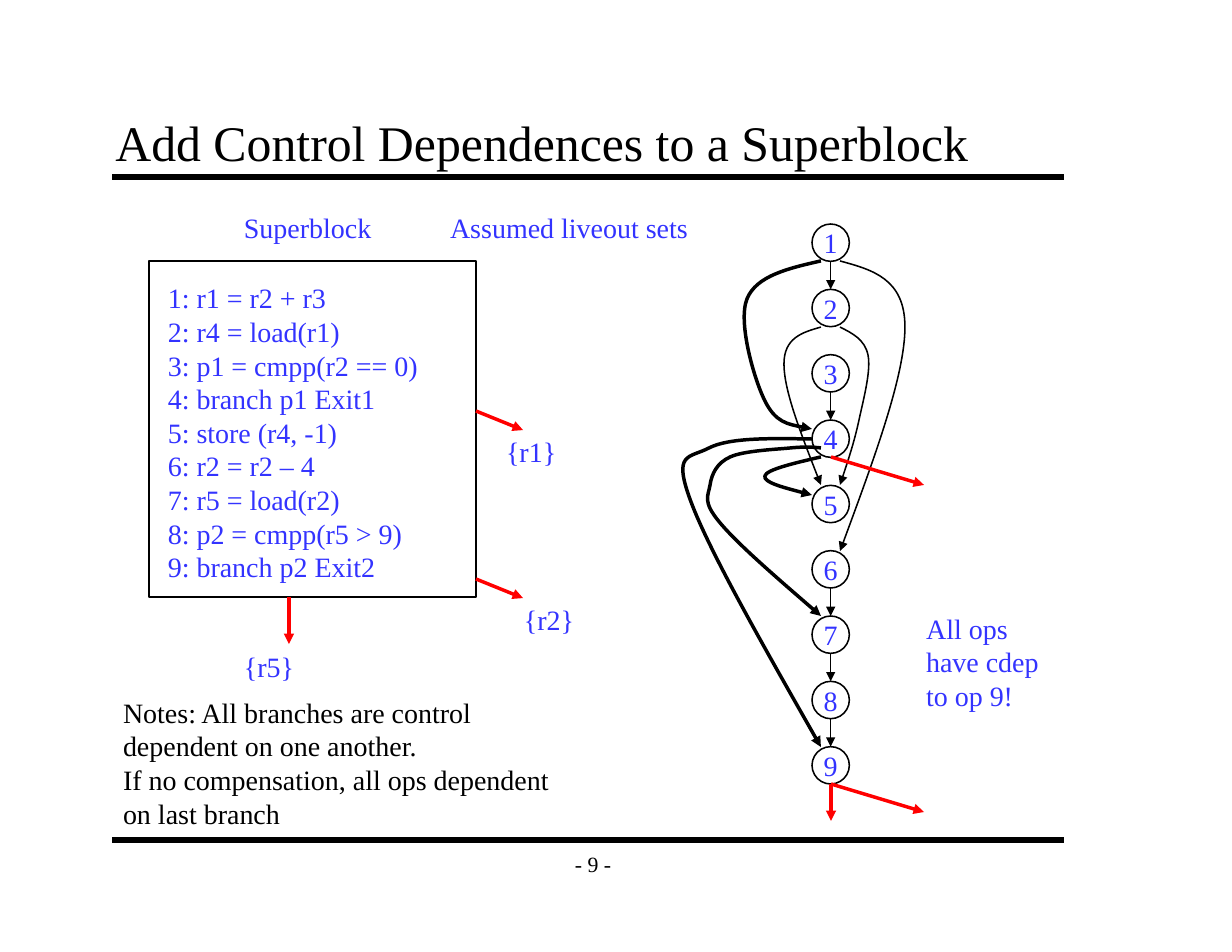
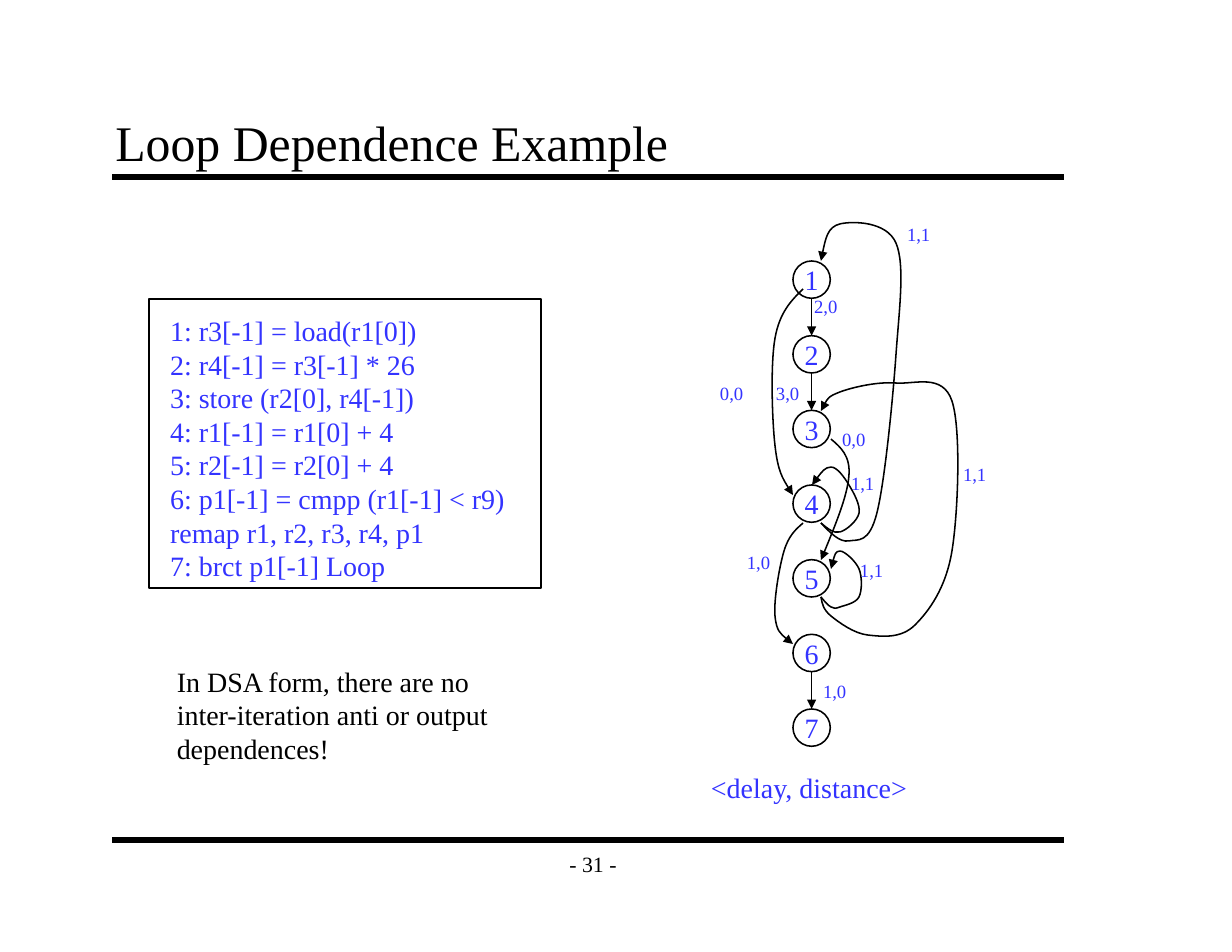
from lxml import etree
from pptx import Presentation
from pptx import util as u
from pptx.dml.color import RGBColor
from pptx.enum import shapes, text
from pptx.oxml.ns import qn

FONT = "Times New Roman"
BLACK, BLUE, RED = "000000", "3333FF", "FF0000"
RULE_SPAN, RULE_HEIGHTS = (1, 9.5), (1.58, 7.5)
TITLE_BOX, PAGE_BOX = (0.92, 0.92, 8.5, 0.67), (4.92, 7.5, 0.75, 0.42)
WIDE_INSETS = (0.11, 0.06)
NODE_SIZE = 1 / 3
THIN, THICK = 1, 2.25
BODY, LABEL = 18, 12
LABEL_WIDTH, LIVEOUT_WIDTH = 0.41, 0.65
BOX_EXIT, NODE_EXIT = (0.42, 0.17), (0.83, 0.25)

SLIDES = [
    {
        "title": "Add Control Dependences to a Superblock",
        "page": "- 9 -",
        "code_frame": (1.33, 2.33, 2.92, 3),
        "texts": [
            (1.4, 2.46, 2.44, BLUE, [
                "1: r1 = r2 + r3",
                "2: r4 = load(r1)",
                "3: p1 = cmpp(r2 == 0)",
                "4: branch p1 Exit1",
                "5: store (r4, -1)",
                "6: r2 = r2 – 4",
                "7: r5 = load(r2)",
                "8: p2 = cmpp(r5 > 9)",
                "9: branch p2 Exit2",
            ]),
            (2.08, 1.83, 1.34, BLUE, ["Superblock"]),
            (3.92, 1.83, 2.33, BLUE, ["Assumed liveout sets"]),
            (4.42, 3.83, LIVEOUT_WIDTH, BLUE, ["{r1}"]),
            (4.58, 5.33, LIVEOUT_WIDTH, BLUE, ["{r2}"]),
            (2.08, 5.75, LIVEOUT_WIDTH, BLUE, ["{r5}"]),
            (1, 6.16, 4.01, BLACK, [
                "Notes: All branches are control",
                "dependent on one another.",
                "If no compensation, all ops dependent",
                "on last branch",
            ]),
            (8.17, 5.41, 1.21, BLUE, ["All ops", "have cdep", "to op 9!"]),
        ],
        "labels": [],
        "nodes": {"left": 7.25, "top": 2, "pitch": 7 / 12, "count": 9, "linked": [1, 3, 6, 7, 8]},
        "exits": [
            (4.25, 3.67, BOX_EXIT),
            (4.25, 5.17, BOX_EXIT),
            (2.58, 5.33, (0, 0.42)),
            (7.42, 4.08, NODE_EXIT),
            (7.42, 7, NODE_EXIT),
            (7.42, 7, (0, 0.33)),
        ],
        "thin_curves": [
            [(7.33, 2.92), (7, 3.25), (7.33, 4.33)],
            [(7.5, 2.33), (8.08, 2.92), (7.5, 4.92)],
            [(7.5, 2.92), (7.75, 3.17), (7.67, 3.75), (7.5, 4.33)],
        ],
        "thick_curves": [
            [(7.33, 4.08), (6.83, 4.25), (7.25, 4.42)],
            [(7.33, 2.33), (6.67, 2.67), (6.83, 3.58), (7.25, 3.83)],
            [(7.33, 4), (7.06, 4), (6.52, 4.08), (6.34, 4.33), (6.43, 4.67), (7.33, 5.5)],
            [(7.25, 3.92), (6.33, 4), (6.17, 4.48), (7.33, 6.67)],
        ],
    },
    {
        "title": "Loop Dependence Example",
        "page": "- 31 -",
        "code_frame": (1.33, 2.67, 3.5, 2.58),
        "texts": [
            (1.42, 2.75, 3.19, BLUE, [
                "1: r3[-1] = load(r1[0])",
                "2: r4[-1] = r3[-1] * 26",
                "3: store (r2[0], r4[-1])",
                "4: r1[-1] = r1[0] + 4",
                "5: r2[-1] = r2[0] + 4",
                "6: p1[-1] = cmpp (r1[-1] < r9)",
                "remap r1, r2, r3, r4, p1",
                "7: brct p1[-1] Loop",
            ]),
            (1.48, 5.88, 3.05, BLACK, [
                "In DSA form, there are no",
                "inter-iteration anti or output",
                "dependences!",
            ]),
            (6.25, 6.83, 1.97, BLUE, ["<delay, distance>"]),
        ],
        "labels": [
            ("1,0", [(6.57, 4.87), (7.25, 6.02)]),
            ("0,0", [(6.33, 3.36), (7.42, 3.77)]),
            ("3,0", [(6.83, 3.36)]),
            ("2,0", [(7.17, 2.58)]),
            ("1,1", [(8, 1.94), (8.5, 4.08), (7.58, 4.94), (7.5, 4.16)]),
        ],
        "nodes": {"left": 7.08, "top": 2.33, "pitch": 2 / 3, "count": 7, "linked": [1, 2, 6]},
        "exits": [],
        "thin_curves": [
            [(7.17, 2.58), (6.92, 3.02), (6.92, 3.98), (7.08, 4.42)],
            [(7.42, 3.92), (7.58, 4.25), (7.33, 5)],
            [(7.17, 4.67), (7, 4.92), (6.92, 5.5), (7.08, 5.75)],
            [(7.33, 4.67), (7.58, 4.83), (7.83, 4.58), (8, 3.17), (8, 2.17), (7.5, 2), (7.33, 2.33)],
            [(7.33, 4.67), (7.5, 4.75), (7.67, 4.58), (7.58, 4.33), (7.42, 4.17), (7.25, 4.33)],
            [(7.33, 5.33), (7.42, 5.42), (7.5, 5.42), (7.67, 5.33), (7.67, 5.08), (7.5, 4.92), (7.42, 5.08)],
            [(7.33, 5.33), (7.42, 5.5), (7.75, 5.67), (8.17, 5.58), (8.5, 4.92),
             (8.5, 3.58), (8, 3.42), (7.5, 3.5), (7.33, 3.67)],
        ],
        "thick_curves": [],
    },
]


def color(hex_string):
    """Turn a hex string into a colour."""
    return RGBColor.from_string(hex_string)


def inches(values):
    """Convert a sequence of numbers to lengths."""
    return [u.Inches(value) for value in values]


def style_line(line, hex_string, width, arrow=False):
    """Set colour, width and optional end arrowhead of a line."""
    line.color.rgb = color(hex_string)
    line.width = u.Pt(width)
    if arrow:
        etree.SubElement(line._get_or_add_ln(), qn("a:tailEnd"), type="triangle")


def write(frame, lines, size, hex_string, align=text.PP_ALIGN.LEFT):
    """Fill a text frame with one paragraph per line."""
    for index, line in enumerate(lines):
        paragraph = frame.add_paragraph() if index else frame.paragraphs[0]
        paragraph.alignment = align
        run = paragraph.add_run()
        run.text = line
        run.font.name, run.font.size = FONT, u.Pt(size)
        run.font.color.rgb = color(hex_string)


def add_text(slide, left, top, width, hex_string, lines, size=BODY):
    """Add a text box whose height follows from its lines."""
    height = 0.1 + len(lines) * size / 60
    frame = slide.shapes.add_textbox(*inches((left, top, width, height))).text_frame
    frame.word_wrap = False
    frame.auto_size = text.MSO_AUTO_SIZE.SHAPE_TO_FIT_TEXT
    write(frame, lines, size, hex_string)


def add_band_text(slide, box, size, line, anchor, align, wrap):
    """Add a title or page number with wide insets."""
    frame = slide.shapes.add_textbox(*inches(box)).text_frame
    frame.word_wrap, frame.vertical_anchor = wrap, anchor
    frame.margin_left = frame.margin_right = u.Inches(WIDE_INSETS[0])
    frame.margin_top = frame.margin_bottom = u.Inches(WIDE_INSETS[1])
    write(frame, [line], size, BLACK, align)


def add_line(slide, start, end, hex_string, width, arrow=True):
    """Add a straight line or arrow."""
    connector = slide.shapes.add_connector(shapes.MSO_CONNECTOR.STRAIGHT, *inches(start + end))
    style_line(connector.line, hex_string, width, arrow)
    etree.SubElement(connector._element.spPr, qn("a:effectLst"))


def add_outline(slide, kind, box):
    """Add an unfilled preset shape with a thin black line."""
    shape = slide.shapes.add_shape(kind, *inches(box))
    shape.shadow.inherit = False
    shape.fill.background()
    style_line(shape.line, BLACK, THIN)
    return shape


def midpoint(first, second):
    """Return the point halfway between two points."""
    return tuple((a + b) / 2 for a, b in zip(first, second))


def smooth_points(anchors):
    """Return Bezier triples that run smoothly through the anchors."""
    before, after = [], []
    for previous, anchor, following in zip(anchors, anchors[1:], anchors[2:]):
        tangent = [(b - a) / 6 for a, b in zip(previous, following)]
        before.append(tuple(a - t for a, t in zip(anchor, tangent)))
        after.append(tuple(a + t for a, t in zip(anchor, tangent)))
    leaving = [midpoint(anchors[0], before[0])] + after
    arriving = before + [midpoint(anchors[-1], after[-1])]
    return [point for triple in zip(leaving, arriving, anchors[1:]) for point in triple]


def add_curve(slide, width, anchors):
    """Add a smooth curved arrow through the anchors."""
    builder = slide.shapes.build_freeform(*inches(anchors[0]))
    builder.add_line_segments([inches(point) for point in smooth_points(anchors)], close=False)
    shape = builder.convert_to_shape()
    outline = shape._element.find(".//" + qn("a:path"))
    segments = outline.findall(qn("a:lnTo"))
    for first in range(0, len(segments), 3):
        curve = etree.SubElement(outline, qn("a:cubicBezTo"))
        for segment in segments[first:first + 3]:
            curve.append(segment[0])
            outline.remove(segment)
    shape.shadow.inherit = False
    shape.fill.background()
    style_line(shape.line, BLACK, width, arrow=True)


def add_nodes(slide, left, top, pitch, count, linked):
    """Add a column of numbered nodes and the arrows between neighbours."""
    middle = left + NODE_SIZE / 2
    for number in range(1, count + 1):
        node_top = top + (number - 1) * pitch
        node = add_outline(slide, shapes.MSO_SHAPE.OVAL, (left, node_top, NODE_SIZE, NODE_SIZE))
        frame = node.text_frame
        frame.word_wrap, frame.vertical_anchor = False, text.MSO_ANCHOR.MIDDLE
        write(frame, [str(number)], BODY, BLUE, text.PP_ALIGN.CENTER)
        if number in linked:
            add_line(slide, (middle, node_top + NODE_SIZE), (middle, node_top + pitch), BLACK, THIN)


def build_slide(presentation, content):
    """Add one slide with its shared bands and its own graph."""
    slide = presentation.slides.add_slide(presentation.slide_layouts[6])
    for height in RULE_HEIGHTS:
        add_line(slide, (RULE_SPAN[0], height), (RULE_SPAN[1], height), BLACK, 4, arrow=False)
    add_band_text(slide, PAGE_BOX, 14, content["page"],
                  text.MSO_ANCHOR.MIDDLE, text.PP_ALIGN.CENTER, False)
    add_band_text(slide, TITLE_BOX, 32, content["title"],
                  text.MSO_ANCHOR.BOTTOM, text.PP_ALIGN.LEFT, True)
    add_outline(slide, shapes.MSO_SHAPE.RECTANGLE, content["code_frame"])
    add_nodes(slide, **content["nodes"])
    for width, curves in ((THIN, content["thin_curves"]), (THICK, content["thick_curves"])):
        for anchors in curves:
            add_curve(slide, width, anchors)
    for left, top, (across, down) in content["exits"]:
        add_line(slide, (left, top), (left + across, top + down), RED, THICK)
    for entry in content["texts"]:
        add_text(slide, *entry)
    for label, places in content["labels"]:
        for left, top in places:
            add_text(slide, left, top, LABEL_WIDTH, BLUE, [label], LABEL)


def main():
    """Build and save the presentation."""
    presentation = Presentation()
    presentation.slide_width, presentation.slide_height = inches((11, 8.5))
    for content in SLIDES:
        build_slide(presentation, content)
    presentation.save("out.pptx")


if __name__ == "__main__":
    main()
